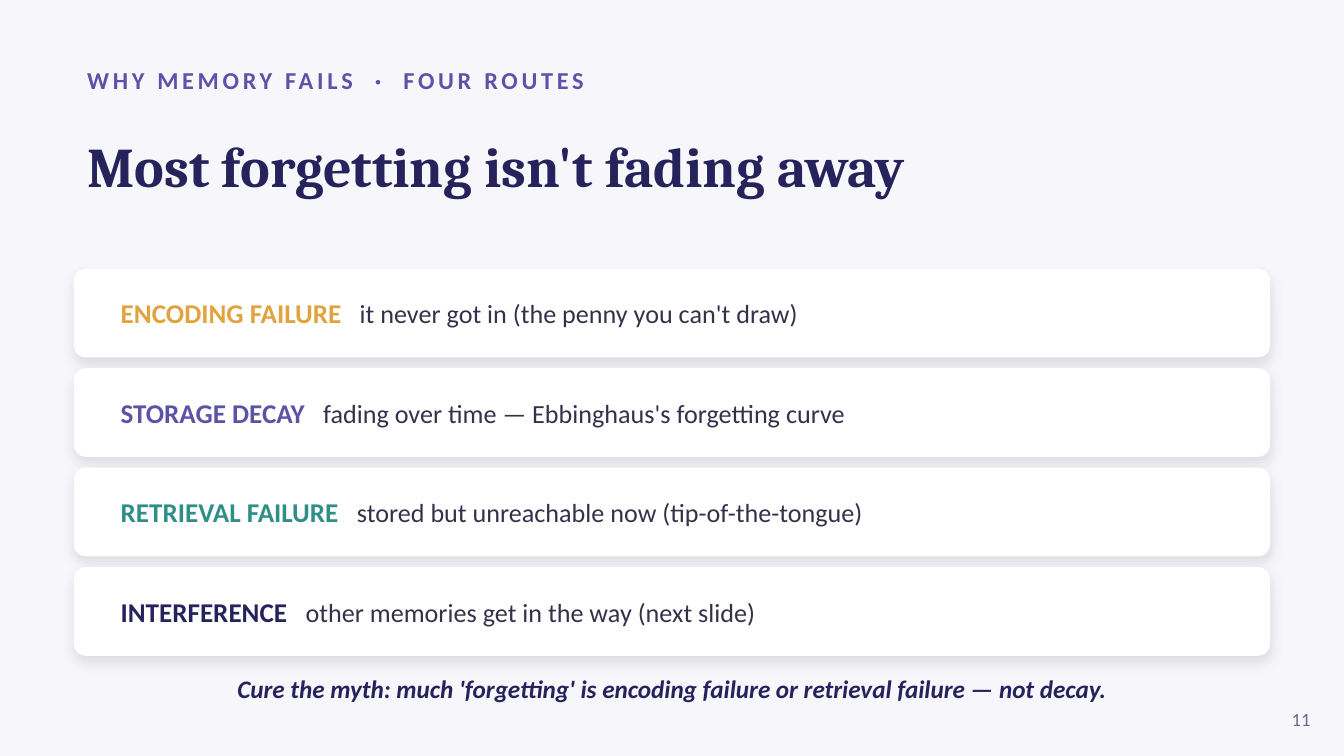
from dataclasses import dataclass

from lxml.etree import SubElement
from pptx import Presentation
from pptx.dml.color import RGBColor
from pptx.enum.shapes import MSO_SHAPE
from pptx.enum.text import MSO_ANCHOR, MSO_AUTO_SIZE, PP_ALIGN
from pptx.oxml.ns import qn
from pptx.util import Inches, Pt


@dataclass(frozen=True)
class Theme:
    background: str = "F7F7FB"
    card: str = "FFFFFF"
    shadow: str = "000000"
    navy: str = "26235C"
    violet: str = "5B53A6"
    amber: str = "E0A33E"
    teal: str = "2F8F86"
    ink: str = "33324A"
    muted: str = "6B6A86"
    heading_font: str = "Cambria"
    body_font: str = "Calibri"
    title_size: float = 30
    label_size: float = 14.5
    detail_size: float = 14
    takeaway_size: float = 13.5
    kicker_size: float = 13
    number_size: float = 10


THEME = Theme()

ROUTES = [
    ("ENCODING FAILURE", "it never got in (the penny you can't draw)", THEME.amber),
    ("STORAGE DECAY", "fading over time — Ebbinghaus's forgetting curve", THEME.violet),
    ("RETRIEVAL FAILURE", "stored but unreachable now (tip-of-the-tongue)", THEME.teal),
    ("INTERFERENCE", "other memories get in the way (next slide)", THEME.navy),
]


def style_font(font, size, color, bold=False, italic=False, name=THEME.body_font):
    font.name = name
    font.size = Pt(size)
    font.color.rgb = RGBColor.from_string(color)
    font.bold = bold
    font.italic = italic


def prepare_frame(shape, align=PP_ALIGN.LEFT):
    """Wrap and centre the text vertically; return the first paragraph."""
    frame = shape.text_frame
    frame.word_wrap = True
    frame.auto_size = MSO_AUTO_SIZE.NONE
    frame.vertical_anchor = MSO_ANCHOR.MIDDLE
    para = frame.paragraphs[0]
    para.alignment = align
    return para


def add_text_box(page, left, top, width, height, align=PP_ALIGN.LEFT):
    box = page.shapes.add_textbox(Inches(left), Inches(top), Inches(width), Inches(height))
    return prepare_frame(box, align)


def add_span(para, text, tracking=0):
    """Add a run with letter spacing in points."""
    span = para.add_run()
    span.text = text
    if tracking:
        span.font._element.set("spc", str(round(tracking * 100)))
    return span


def add_soft_shadow(shape):
    shape.shadow.inherit = False
    effects = shape._element.spPr.find(qn("a:effectLst"))
    shadow = SubElement(effects, qn("a:outerShdw"), blurRad=str(Pt(7)), dist=str(Pt(3)),
                        dir=str(90 * 60000), algn="ctr", rotWithShape="0")
    color = SubElement(shadow, qn("a:srgbClr"), val=THEME.shadow)
    SubElement(color, qn("a:alpha"), val="10000")


def add_heading(page, left, top, width):
    kicker = add_text_box(page, left, top, width + 0.1, 0.35)
    style_font(kicker.font, THEME.kicker_size, THEME.violet, bold=True)
    add_span(kicker, "WHY MEMORY FAILS", 2)
    for part in ("·", "FOUR ROUTES"):
        add_span(kicker, " ", 6.9)
        add_span(kicker, part, 2)

    title = page.shapes.title
    title.left, title.top = Inches(left), Inches(top + 0.36)
    title.width, title.height = Inches(width), Inches(0.9)
    para = prepare_frame(title)
    para.line_spacing = 1.0
    para.text = "Most forgetting isn't fading away"
    style_font(para.font, THEME.title_size, THEME.navy, bold=True, name=THEME.heading_font)


def add_route_card(page, left, top, width, height, route):
    label, detail, color = route
    card = page.shapes.add_shape(MSO_SHAPE.ROUNDED_RECTANGLE, Inches(left), Inches(top),
                                 Inches(width), Inches(height))
    card.adjustments[0] = 0.09 / height
    card.fill.solid()
    card.fill.fore_color.rgb = RGBColor.from_string(THEME.card)
    card.line.fill.background()
    add_soft_shadow(card)

    para = add_text_box(page, left + 0.25, top + 0.1, width - 0.5, height - 0.2)
    style_font(add_span(para, label).font, THEME.label_size, color, bold=True)
    style_font(add_span(para, " ", 6.56).font, THEME.label_size, color, bold=True)
    style_font(add_span(para, detail).font, THEME.detail_size, THEME.ink)


def add_route_list(page, left, top, width, height, gap=0.08):
    card_height = (height - gap * (len(ROUTES) - 1)) / len(ROUTES)
    for index, route in enumerate(ROUTES):
        add_route_card(page, left, top + index * (card_height + gap), width, card_height, route)


def add_takeaway(page, left, top, width, height):
    para = add_text_box(page, left, top, width, height, PP_ALIGN.CENTER)
    para.text = ("Cure the myth: much 'forgetting' is encoding failure "
                 "or retrieval failure — not decay.")
    style_font(para.font, THEME.takeaway_size, THEME.navy, bold=True, italic=True)


def add_page_number(page, left, top, width, height):
    para = add_text_box(page, left, top, width, height, PP_ALIGN.RIGHT)
    para.text = "11"
    style_font(para.font, THEME.number_size, THEME.muted)


def main():
    deck = Presentation()
    deck.slide_width = Inches(10)
    deck.slide_height = deck.slide_width * 9 // 16
    page = deck.slides.add_slide(deck.slide_layouts.get_by_name("Title Only"))
    page.background.fill.solid()
    page.background.fill.fore_color.rgb = RGBColor.from_string(THEME.background)

    margin, content_width = 0.55, 8.9
    add_heading(page, margin, 0.42, content_width)
    add_route_list(page, margin, 2, content_width, 2.88)
    add_takeaway(page, margin, 4.95, content_width, 0.35)
    add_page_number(page, 9.35, 5.2, 0.5, 0.3)
    deck.save("out.pptx")


if __name__ == "__main__":
    main()
